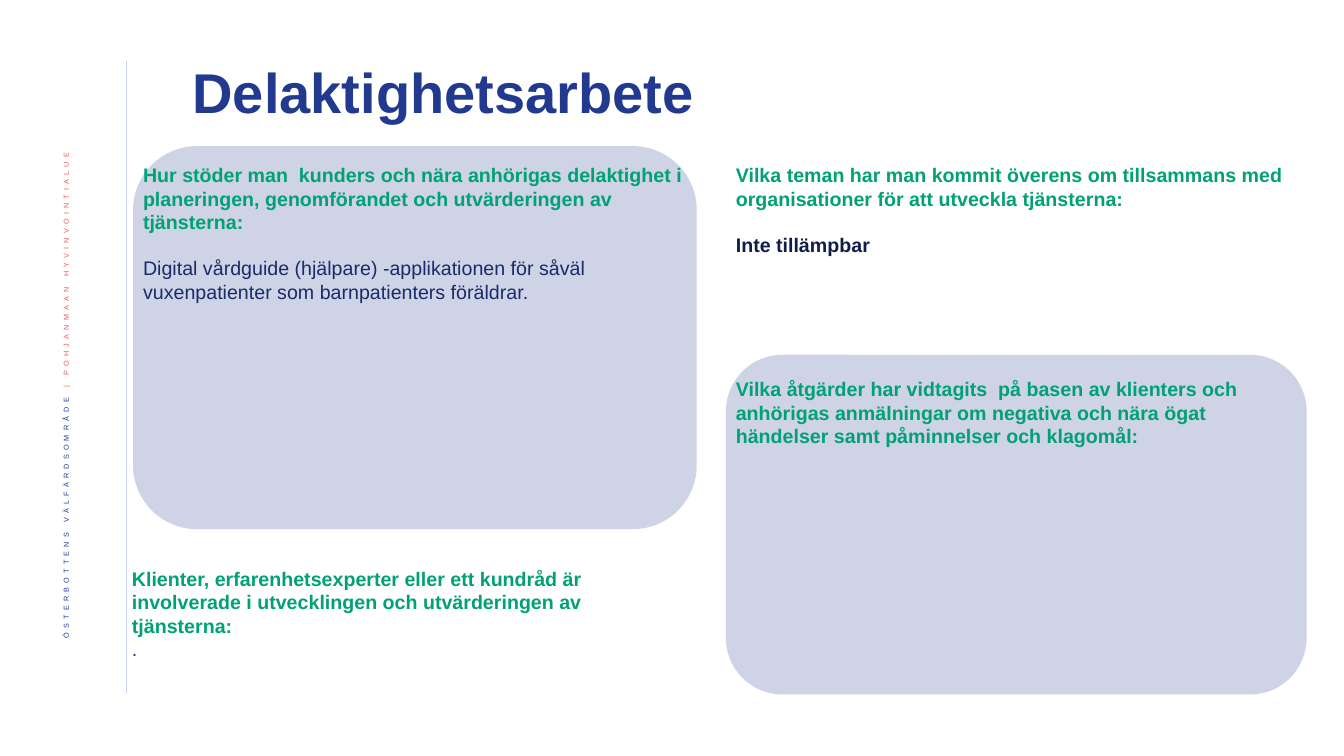
from dataclasses import dataclass

from lxml.etree import SubElement
from pptx import Presentation
from pptx.dml.color import RGBColor
from pptx.enum.shapes import MSO_CONNECTOR as Connector, MSO_SHAPE as Shape
from pptx.enum.text import MSO_ANCHOR as Anchor, MSO_AUTO_SIZE as AutoSize, PP_ALIGN as Align
from pptx.oxml.ns import qn
from pptx.slide import Slide
from pptx.util import Inches, Pt

COLORS = {
    "navy": "213A8F",
    "answer": "192B6B",
    "dark": "101D48",
    "green": "00A174",
    "coral": "EB5C5F",
    "rule": "C9D2F2",
}
FONT = "Arial"
PANEL_OPACITY = 22
BLANK_LINE = 16


@dataclass(frozen=True)
class Box:
    left: float
    top: float
    width: float
    height: float

    def emu(self) -> tuple:
        return tuple(Inches(v) for v in (self.left, self.top, self.width, self.height))


@dataclass(frozen=True)
class Topic:
    box: Box
    question: str
    answer: str = ""
    answer_color: str = "answer"
    answer_bold: bool = False
    gap: float = BLANK_LINE
    panel: Box | None = None


TOPICS = [
    Topic(
        Box(1.32, 1.57, 5.59, 1.82),
        "Hur stöder man  kunders och nära anhörigas delaktighet i planeringen, "
        "genomförandet och utvärderingen av tjänsterna:",
        "Digital vårdguide (hjälpare) -applikationen för såväl "
        "vuxenpatienter som barnpatienters föräldrar.",
        panel=Box(1.32, 1.45, 5.59, 3.8),
    ),
    Topic(
        Box(7.2, 1.57, 5.76, 1.31),
        "Vilka teman har man kommit överens om tillsammans med organisationer "
        "för att utveckla tjänsterna:",
        "Inte tillämpbar",
        answer_color="dark",
        answer_bold=True,
    ),
    Topic(
        Box(1.21, 5.57, 5.59, 1.28),
        "Klienter, erfarenhetsexperter eller ett kundråd är involverade i "
        "utvecklingen och utvärderingen av tjänsterna:",
        ".",
        answer_color="navy",
        gap=0,
    ),
    Topic(
        Box(7.2, 3.69, 5.76, 1.28),
        "Vilka åtgärder har vidtagits  på basen av klienters och anhörigas anmälningar "
        "om negativa och nära ögat händelser samt påminnelser och klagomål:",
        panel=Box(7.2, 3.52, 5.76, 3.37),
    ),
]


def add_text(paragraph, text: str, *, size: float = 14, color: str = "navy", bold: bool = False):
    run = paragraph.add_run()
    run.text = text
    run.font.name = FONT
    run.font.size = Pt(size)
    run.font.bold = bold
    run.font.color.rgb = RGBColor.from_string(COLORS[color])
    return run


def add_title(slide: Slide) -> None:
    title = slide.shapes.title
    title.left, title.top, title.width, title.height = Box(1.81, 0.45, 9.98, 0.99).emu()
    title.text_frame.vertical_anchor = Anchor.MIDDLE
    paragraph = title.text_frame.paragraphs[0]
    paragraph.alignment = Align.LEFT
    paragraph.line_spacing = 0.9
    add_text(paragraph, "Delaktighetsarbete", size=40, bold=True)


def add_side_rule(slide: Slide) -> None:
    x = Inches(1.25)
    rule = slide.shapes.add_connector(Connector.STRAIGHT, x, Inches(0.61), x, Inches(6.88))
    rule.line.color.rgb = RGBColor.from_string(COLORS["rule"])
    rule.line.width = Pt(0.5)
    SubElement(rule.line._get_or_add_ln().getparent(), qn("a:effectLst"))


def add_side_label(slide: Slide) -> None:
    """Add the organisation name, reading upwards in raised, widely spaced letters."""
    frame = slide.shapes.add_textbox(*Box(0.42, 1.42, 0.52, 5.73).emu()).text_frame
    frame.word_wrap = True
    frame.vertical_anchor = Anchor.MIDDLE
    frame._txBody.bodyPr.set("vert", "vert270")
    paragraph = frame.paragraphs[0]
    paragraph.alignment = Align.RIGHT
    paragraph.line_spacing = 0.9
    for text, color in (
        ("ÖSTERBOTTENS VÄLFÄRDSOMRÅDE ", "navy"),
        ("| POHJANMAAN HYVINVOINTIALUE", "coral"),
    ):
        properties = add_text(paragraph, text, size=9, color=color).font._element
        properties.set("baseline", "30000")
        properties.set("spc", "300")


def add_panel(slide: Slide, box: Box) -> None:
    panel = slide.shapes.add_shape(Shape.ROUNDED_RECTANGLE, *box.emu())
    panel.shadow.inherit = False
    panel.fill.solid()
    panel.fill.fore_color.rgb = RGBColor.from_string(COLORS["navy"])
    panel.line.fill.background()
    color = panel._element.spPr.find(qn("a:solidFill")).find(qn("a:srgbClr"))
    SubElement(color, qn("a:alpha")).set("val", str(PANEL_OPACITY * 1000))


def add_topic(slide: Slide, topic: Topic) -> None:
    if topic.panel:
        add_panel(slide, topic.panel)
    frame = slide.shapes.add_textbox(*topic.box.emu()).text_frame
    frame.word_wrap = True
    frame.auto_size = AutoSize.SHAPE_TO_FIT_TEXT
    add_text(frame.paragraphs[0], topic.question, color="green", bold=True)
    if topic.answer:
        answer = frame.add_paragraph()
        answer.space_before = Pt(topic.gap)
        add_text(answer, topic.answer, color=topic.answer_color, bold=topic.answer_bold)


def main() -> None:
    deck = Presentation()
    deck.slide_width, deck.slide_height = Inches(13.33), Inches(7.5)
    slide = deck.slides.add_slide(deck.slide_layouts[5])
    add_side_rule(slide)
    add_side_label(slide)
    add_title(slide)
    for topic in TOPICS:
        add_topic(slide, topic)
    deck.save("out.pptx")


if __name__ == "__main__":
    main()
